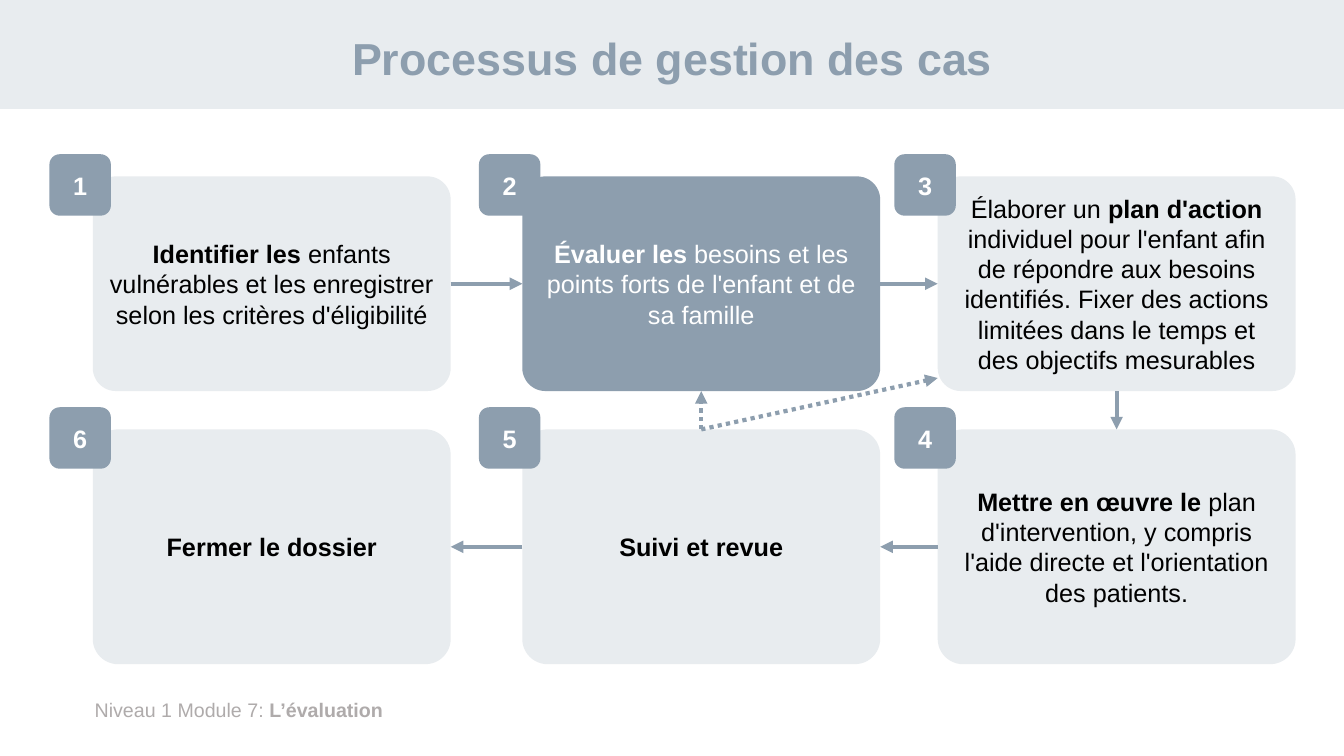
import lxml.etree
import pptx
import pptx.dml.color
import pptx.enum.dml
import pptx.enum.shapes
import pptx.enum.text
import pptx.oxml.ns
import pptx.util

Inches = pptx.util.Inches
Shapes = pptx.enum.shapes.MSO_SHAPE
Align = pptx.enum.text.PP_ALIGN
Anchor = pptx.enum.text.MSO_ANCHOR

COLOURS = {"slate": "8D9EAE", "mist": "E8ECEF", "white": "FFFFFF",
           "black": "000000", "grey": "AFABAB"}
COLUMNS = (0.92, 5.18, 9.3)
ROWS = ((1.75, 2.13), (4.26, 2.33))
BOX_WIDTH = 3.55
TOP, LEFT, BOTTOM, RIGHT = range(4)

STEPS = [
    (1, 0, 0, [("Identifier les ", True),
               ("enfants vulnérables et les enregistrer selon les critères d'éligibilité", False)]),
    (2, 1, 0, [("Évaluer les ", True),
               ("besoins et les points forts de l'enfant et de sa famille", False)]),
    (3, 2, 0, [("Élaborer un ", False), ("plan d'action ", True),
               ("individuel pour l'enfant afin de répondre aux besoins identifiés. Fixer des "
                "actions limitées dans le temps et des objectifs mesurables", False)]),
    (6, 0, 1, [("Fermer le dossier", True)]),
    (5, 1, 1, [("Suivi et revue", True)]),
    (4, 2, 1, [("Mettre en œuvre le ", True),
               ("plan d'intervention, y compris l'aide directe et l'orientation des patients.", False)]),
]
CURRENT_STEP = 2
FLOWS = [(1, RIGHT, 2, LEFT, False), (2, RIGHT, 3, LEFT, False), (3, BOTTOM, 4, TOP, False),
         (4, LEFT, 5, RIGHT, False), (5, LEFT, 6, RIGHT, False), (5, TOP, 2, BOTTOM, True)]


def colour(name):
    """Return the named colour."""
    return pptx.dml.color.RGBColor.from_string(COLOURS[name])


def write(shape, spans, size, ink, align=Align.CENTER, anchor=Anchor.MIDDLE, spacing=1.0):
    """Fill a shape with one paragraph of (text, bold) spans."""
    frame = shape.text_frame
    frame.word_wrap = True
    frame.vertical_anchor = anchor
    para = frame.paragraphs[0]
    para.alignment = align
    para.line_spacing = spacing
    for text, bold in spans:
        span = para.add_run()
        span.text = text
        span.font.color.rgb = colour(ink)
        formats = {"name": "Arial", "size": pptx.util.Pt(size), "bold": bold}
        for key, value in formats.items():
            setattr(span.font, key, value)


def add_panel(page, kind, box, fill):
    """Add a flat filled shape in the given box."""
    panel = page.shapes.add_shape(kind, *map(Inches, box))
    panel.shadow.inherit = False
    panel.fill.solid()
    panel.fill.fore_color.rgb = colour(fill)
    panel.line.fill.background()
    return panel


def add_header(page, box):
    """Add the title band with its centred title."""
    left, top, width, height = box
    add_panel(page, Shapes.RECTANGLE, box, "mist")
    title = page.shapes.add_textbox(Inches(left + 0.92), Inches(top + 0.13),
                                    Inches(width - 1.83), Inches(height - 0.13))
    write(title, [("Processus de gestion des cas", True)], 32, "slate", spacing=0.9)


def add_footer(page, box):
    """Add the module line at the bottom."""
    footer = page.shapes.add_textbox(*map(Inches, box))
    write(footer, [("Niveau 1 Module 7: ", False), ("L’évaluation", True)],
          14, "grey", Align.LEFT, Anchor.TOP)


def add_step(page, box, number, spans):
    """Add a step box with its number badge and return the box."""
    left, top = box[:2]
    current = number == CURRENT_STEP
    step = add_panel(page, Shapes.ROUNDED_RECTANGLE, box, "slate" if current else "mist")
    step.adjustments[0] = 0.108
    write(step, spans, 18, "white" if current else "black")
    badge = add_panel(page, Shapes.ROUNDED_RECTANGLE,
                      (left - 0.43, top - 0.22, 0.61, 0.61), "slate")
    write(badge, [(str(number), True)], 18, "white")
    return step


def add_arrow(page, end=(0, 0), dotted=False):
    """Add an arrow that stops at the given point."""
    arrow = page.shapes.add_connector(pptx.enum.shapes.MSO_CONNECTOR.STRAIGHT,
                                      0, 0, *map(Inches, end))
    arrow.line.color.rgb = colour("slate")
    arrow.line.width = pptx.util.Pt(3)
    if dotted:
        arrow.line.dash_style = pptx.enum.dml.MSO_LINE.ROUND_DOT
    properties = arrow.element.spPr
    outline = properties.find(pptx.oxml.ns.qn("a:ln"))
    lxml.etree.SubElement(outline, pptx.oxml.ns.qn("a:tailEnd"), type="triangle")
    lxml.etree.SubElement(properties, pptx.oxml.ns.qn("a:effectLst"))
    return arrow


def add_flows(page, steps):
    """Join the steps with arrows."""
    for source, source_side, target, target_side, dotted in FLOWS:
        arrow = add_arrow(page, dotted=dotted)
        arrow.begin_connect(steps[source], source_side)
        arrow.end_connect(steps[target], target_side)
    review = add_arrow(page, (COLUMNS[2], 3.75), dotted=True)
    review.begin_connect(steps[5], TOP)


def main():
    """Build and save the deck."""
    deck = pptx.Presentation()
    deck.slide_width, deck.slide_height = Inches(13.33), Inches(7.5)
    page = deck.slides.add_slide(deck.slide_layouts[6])
    add_header(page, (0, 0, 13.33, 1.08))
    add_footer(page, (0.84, 6.87, 11.35, 0.34))
    steps = {}
    for number, column, row, spans in STEPS:
        top, height = ROWS[row]
        steps[number] = add_step(page, (COLUMNS[column], top, BOX_WIDTH, height), number, spans)
    add_flows(page, steps)
    deck.save("out.pptx")


if __name__ == "__main__":
    main()
